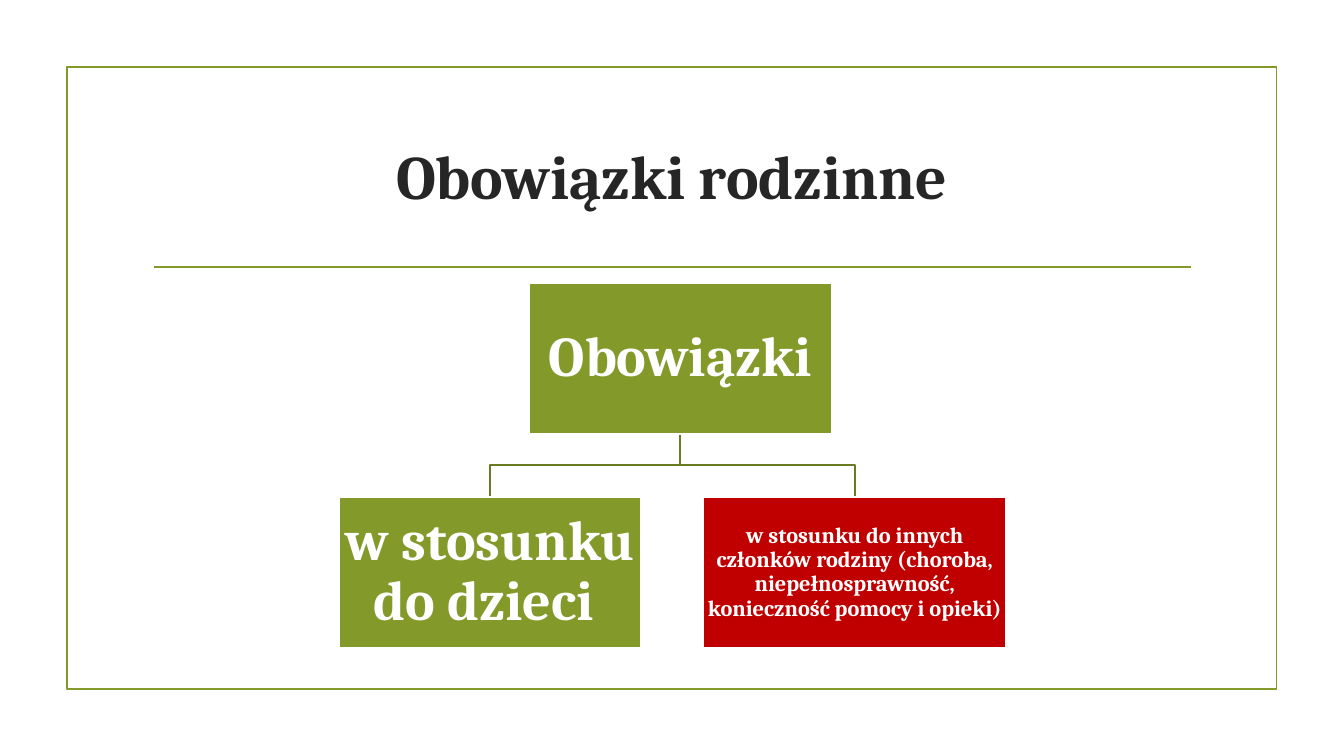
from pptx import Presentation
from pptx.dml.color import RGBColor
from pptx.enum import shapes, text
from pptx.util import Pt

COLORS = {
    "green": "83992A",
    "dark_green": "697B22",
    "red": "C00000",
    "white": "FFFFFF",
    "ink": "262626",
}
FONT = "Cambria"
LINE_WIDTH = 1.25
TITLE = "Obowiązki rodzinne"
BOX_WIDTH, BOX_HEIGHT = 216, 108
ROOT_TOP, CHILD_TOP = 202.3, 355
BRANCH_Y = 332
ROOT = ("Obowiązki", 378, "green", 40, 2)
CHILDREN = [
    ("w stosunku do dzieci ", 242, "green", 40, 2),
    (
        "w stosunku do innych członków rodziny (choroba, "
        "niepełnosprawność, konieczność pomocy i opieki)",
        502.6, "red", 16, 0.8,
    ),
]


def color(name):
    return RGBColor.from_string(COLORS[name])


def set_line(shape, name):
    shape.line.color.rgb = color(name)
    shape.line.width = Pt(LINE_WIDTH)


def set_text(shape, wording, size, name, inset):
    frame = shape.text_frame
    frame.word_wrap = True
    frame.auto_size = text.MSO_AUTO_SIZE.NONE
    frame.vertical_anchor = text.MSO_ANCHOR.MIDDLE
    frame.margin_left = frame.margin_right = Pt(inset)
    frame.margin_top = frame.margin_bottom = Pt(inset)
    paragraph = frame.paragraphs[0]
    paragraph.text = wording
    paragraph.alignment = text.PP_ALIGN.CENTER
    paragraph.line_spacing = 0.9
    paragraph.font.name = FONT
    paragraph.font.size = Pt(size)
    paragraph.font.bold = True
    paragraph.font.color.rgb = color(name)


def add_rectangle(slide, left, top, width, height, line):
    shape = slide.shapes.add_shape(
        shapes.MSO_SHAPE.RECTANGLE, Pt(left), Pt(top), Pt(width), Pt(height))
    shape.shadow.inherit = False
    shape.fill.background()
    set_line(shape, line)
    return shape


def add_box(slide, box, top):
    wording, left, fill, size, inset = box
    shape = add_rectangle(slide, left, top, BOX_WIDTH, BOX_HEIGHT, "white")
    shape.fill.solid()
    shape.fill.fore_color.rgb = color(fill)
    set_text(shape, wording, size, "white", inset)


def add_branch(slide, child):
    root_x = ROOT[1] + BOX_WIDTH / 2
    child_x = child[1] + BOX_WIDTH / 2
    points = [(root_x, BRANCH_Y), (child_x, BRANCH_Y), (child_x, CHILD_TOP)]
    builder = slide.shapes.build_freeform(Pt(root_x), Pt(ROOT_TOP + BOX_HEIGHT))
    builder.add_line_segments([(Pt(x), Pt(y)) for x, y in points], close=False)
    branch = builder.convert_to_shape()
    branch.shadow.inherit = False
    branch.fill.background()
    set_line(branch, "dark_green")


def main():
    presentation = Presentation()
    presentation.slide_width, presentation.slide_height = Pt(960), Pt(540)
    slide = presentation.slides.add_slide(presentation.slide_layouts[5])

    add_rectangle(slide, 47.8, 48, 864, 444, "green")
    rule = slide.shapes.add_connector(
        shapes.MSO_CONNECTOR.STRAIGHT, Pt(110), Pt(190.8), Pt(850.5), Pt(190.8))
    set_line(rule, "green")
    properties = rule.line._get_or_add_ln().getparent()
    properties.append(properties.makeelement(
        "{http://schemas.openxmlformats.org/drawingml/2006/main}effectLst", {}))

    title = slide.shapes.title
    title.left, title.top, title.width, title.height = Pt(102), Pt(77), Pt(756), Pt(103)
    set_text(title, TITLE, 44, "ink", 3.6)

    for child in CHILDREN:
        add_branch(slide, child)
    add_box(slide, ROOT, ROOT_TOP)
    for child in CHILDREN:
        add_box(slide, child, CHILD_TOP)

    presentation.save("out.pptx")


if __name__ == "__main__":
    main()
